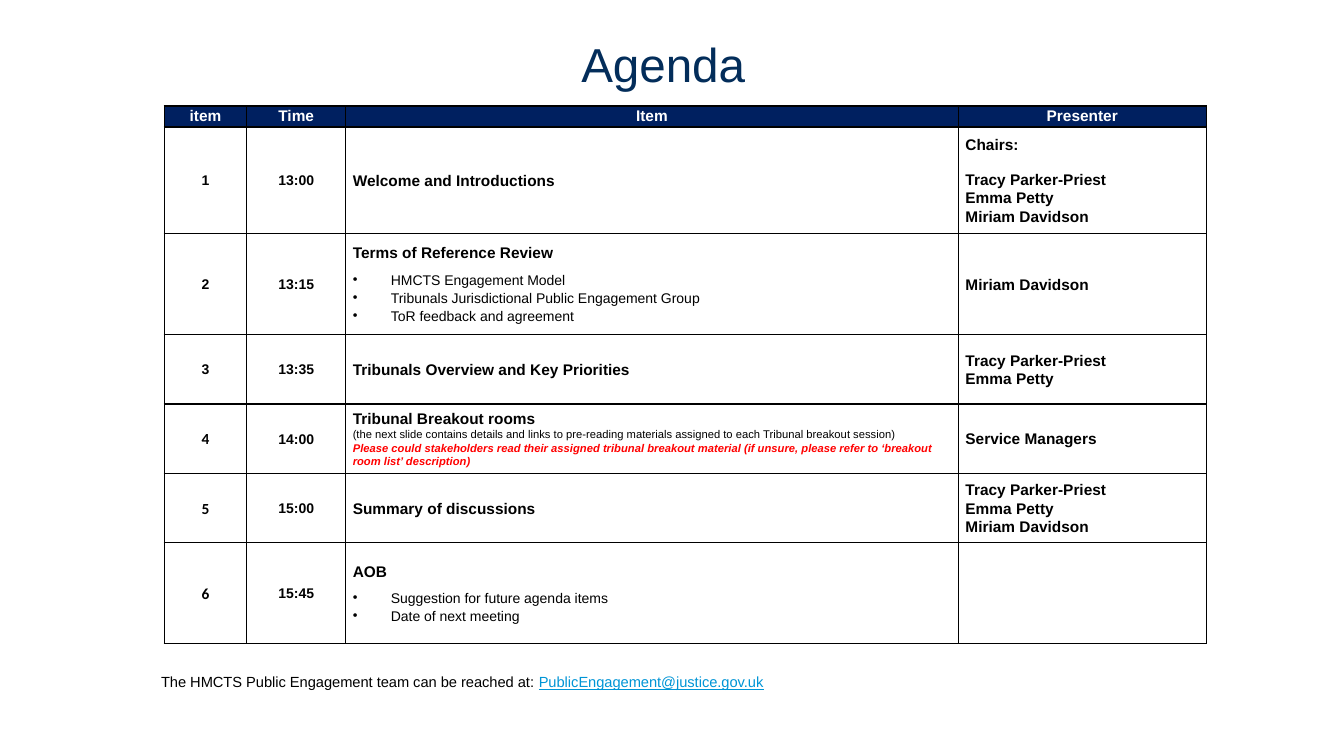
from copy import deepcopy

from lxml import etree
from pptx import Presentation
from pptx import util as u
from pptx.dml.color import RGBColor
from pptx.enum import text
from pptx.oxml.ns import qn

NAVY = RGBColor(0x00, 0x20, 0x60)
TITLE_BLUE = RGBColor(0x03, 0x2D, 0x5A)
LINK_BLUE = RGBColor(0x00, 0x95, 0xD6)
RED = RGBColor(0xFF, 0x00, 0x00)
BLACK = RGBColor(0x00, 0x00, 0x00)
WHITE = RGBColor(0xFF, 0xFF, 0xFF)

COLUMN_WIDTHS = (2.08, 2.49, 15.44, 6.25)
ROW_HEIGHTS = (0.53, 2.69, 2.54, 1.75, 1.75, 1.75, 2.54)
HEADERS = ("item", "Time", "Item", "Presenter")

# Time, heading (with any note lines), bullets, presenter paragraphs
AGENDA = (
    ("13:00", "Welcome and Introductions", (),
     ("Chairs:", "Tracy Parker-Priest\nEmma Petty\nMiriam Davidson")),
    ("13:15", "Terms of Reference Review",
     ("HMCTS Engagement Model",
      "Tribunals Jurisdictional Public Engagement Group",
      "ToR feedback and agreement"),
     ("Miriam Davidson",)),
    ("13:35", "Tribunals Overview and Key Priorities", (),
     ("Tracy Parker-Priest\nEmma Petty",)),
    ("14:00",
     "Tribunal Breakout rooms\n"
     "(the next slide contains details and links to pre-reading materials "
     "assigned to each Tribunal breakout session)\n"
     "Please could stakeholders read their assigned tribunal breakout material "
     "(if unsure, please refer to ‘breakout room list’ description)", (),
     ("Service Managers",)),
    ("15:00", "Summary of discussions", (),
     ("Tracy Parker-Priest\nEmma Petty\nMiriam Davidson",)),
    ("15:45", "AOB", ("Suggestion for future agenda items", "Date of next meeting"), ()),
)


def format_run(run, size, color=BLACK, bold=False, italic=False, name="Arial"):
    font = run.font
    font.name, font.size = name, u.Pt(size)
    font.bold, font.italic = bold, italic
    font.color.rgb = color


def size_line_breaks(paragraph):
    """Give each line break the format of the run before it."""
    for line_break in paragraph._p.findall(qn("a:br")):
        line_break.append(deepcopy(line_break.getprevious().find(qn("a:rPr"))))


def add_bullet(paragraph):
    properties = paragraph._p.get_or_add_pPr()
    properties.set("marL", str(u.Cm(0.96)))
    properties.set("indent", str(-u.Cm(0.96)))
    etree.SubElement(properties, qn("a:buChar")).set("char", "•")


def add_borders(cell):
    properties = cell._tc.get_or_add_tcPr()
    for index, side in enumerate(("lnL", "lnR", "lnT", "lnB")):
        line = etree.Element(qn(f"a:{side}"), w=str(u.Pt(1)))
        fill = etree.SubElement(line, qn("a:solidFill"))
        etree.SubElement(fill, qn("a:srgbClr")).set("val", str(BLACK))
        properties.insert(index, line)


def format_cell(cell, fill=None):
    cell.margin_left = cell.margin_right = u.Cm(0.18)
    cell.margin_top = cell.margin_bottom = 0
    if fill is None:
        cell.vertical_anchor = text.MSO_ANCHOR.MIDDLE
        cell.fill.background()
    else:
        cell.vertical_anchor = text.MSO_ANCHOR.TOP
        cell.fill.solid()
        cell.fill.fore_color.rgb = fill
    add_borders(cell)


def write_cell(cell, paragraphs, size, color=BLACK, centred=False, name="Arial"):
    """Write bold paragraphs, with space between them."""
    frame = cell.text_frame
    for index, words in enumerate(paragraphs):
        paragraph = frame.add_paragraph() if index else frame.paragraphs[0]
        paragraph.text = words
        paragraph.line_spacing = 1.07
        paragraph.space_before = u.Pt(6 if index else 0)
        paragraph.space_after = u.Pt(6)
        paragraph.alignment = text.PP_ALIGN.CENTER if centred else text.PP_ALIGN.LEFT
        for run in paragraph.runs:
            format_run(run, size, color, bold=True, name=name)
        size_line_breaks(paragraph)


def write_topic(cell, heading, bullets):
    """Write a bold heading, its small note lines and its bullets."""
    frame = cell.text_frame
    paragraph = frame.paragraphs[0]
    paragraph.text = heading
    paragraph.line_spacing = 1.07
    paragraph.space_after = u.Pt(6)
    styles = ((11, BLACK, True, False), (8, BLACK, False, False), (8, RED, True, True))
    for run, style in zip(paragraph.runs, styles):
        format_run(run, *style)
    size_line_breaks(paragraph)
    for words in bullets:
        paragraph = frame.add_paragraph()
        paragraph.text = words
        paragraph.line_spacing = 1.15
        add_bullet(paragraph)
        format_run(paragraph.runs[0], 10)


def place_title(slide, left, top, width, height):
    title = slide.shapes.title
    title.left, title.top, title.width, title.height = left, top, width, height
    frame = title.text_frame
    frame.margin_left = frame.margin_right = frame.margin_top = frame.margin_bottom = 0
    frame.vertical_anchor = text.MSO_ANCHOR.TOP
    frame.text = "Agenda"
    paragraph = frame.paragraphs[0]
    paragraph.alignment = text.PP_ALIGN.CENTER
    paragraph.line_spacing = 0.9
    format_run(paragraph.runs[0], 34, TITLE_BLUE)


def add_agenda_table(slide, left, top):
    table = slide.shapes.add_table(
        len(ROW_HEIGHTS), len(COLUMN_WIDTHS), left, top,
        u.Cm(sum(COLUMN_WIDTHS)), u.Cm(sum(ROW_HEIGHTS))).table
    table.horz_banding = False
    for column, width in zip(table.columns, COLUMN_WIDTHS):
        column.width = u.Cm(width)
    for row, height in zip(table.rows, ROW_HEIGHTS):
        row.height = u.Cm(height)

    # Header row
    for cell, label in zip(table.rows[0].cells, HEADERS):
        format_cell(cell, NAVY)
        write_cell(cell, (label,), 11, WHITE, centred=True)

    # Agenda rows
    for number, (time, heading, bullets, presenters) in enumerate(AGENDA, 1):
        cells = list(table.rows[number].cells)
        for cell in cells:
            format_cell(cell)
        number_size, number_font = (10, "Arial") if number < 4 else (11, "Calibri")
        write_cell(cells[0], (str(number),), number_size, centred=True, name=number_font)
        write_cell(cells[1], (time,), 10, centred=True)
        write_topic(cells[2], heading, bullets)
        write_cell(cells[3], presenters, 11)


def add_contact_line(slide, left, top, width, height):
    frame = slide.shapes.add_textbox(left, top, width, height).text_frame
    frame.word_wrap = True
    paragraph = frame.paragraphs[0]
    paragraph.text = "The HMCTS Public Engagement team can be reached at: "
    paragraph.line_spacing = 1.07
    format_run(paragraph.runs[0], 10.5)
    address = paragraph.add_run()
    address.text = "PublicEngagement@justice.gov.uk"
    format_run(address, 10.5, LINK_BLUE)
    address.font.underline = True


def build_agenda_slide(presentation):
    slide = presentation.slides.add_slide(presentation.slide_layouts[5])
    place_title(slide, u.Cm(-0.43), u.Cm(1.04), u.Cm(34.29), u.Cm(4.32))
    add_agenda_table(slide, u.Cm(4.14), u.Cm(2.67))
    add_contact_line(slide, u.Cm(3.81), u.Cm(16.8), u.Cm(17.15), u.Cm(0.83))


def main():
    presentation = Presentation()
    presentation.slide_width, presentation.slide_height = u.Cm(33.87), u.Cm(19.05)
    build_agenda_slide(presentation)
    presentation.save("out.pptx")


if __name__ == "__main__":
    main()
